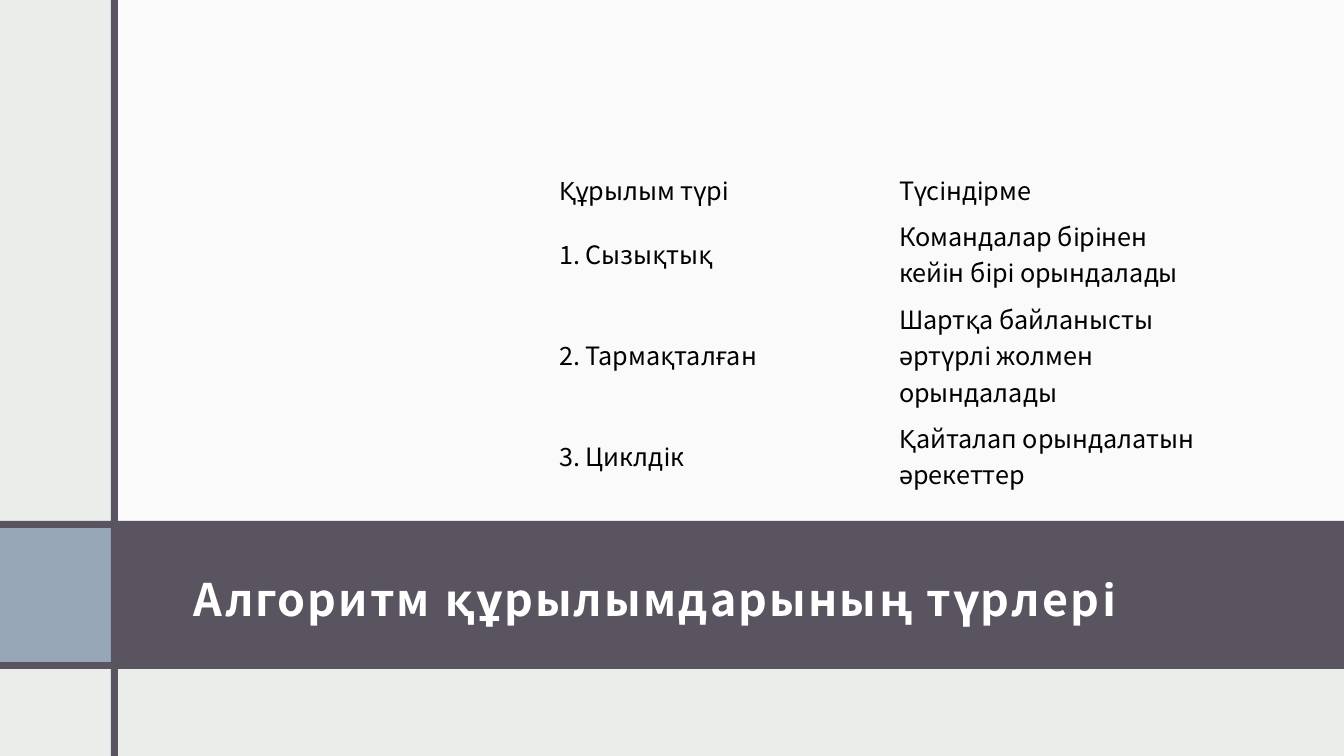
"""Build the slide on the kinds of algorithm structures."""
import dataclasses
import typing

import lxml.etree
import pptx
import pptx.dml.color
import pptx.enum.shapes
import pptx.enum.text
import pptx.oxml.ns
import pptx.util

PX = 914400 / 100.8
FONT = "Noto Sans CJK JP"
NO_STYLE = "{2D5ABB26-0587-4C30-8999-92F81FD0307C}"
COLORS = {
    "background": "EBEDEB",
    "panel": "FFFFFF",
    "band": "595460",
    "accent": "97A7B8",
    "title": "FFFFFF",
    "body": "000000",
}
TITLE_FORMAT = {"name": FONT, "size": pptx.util.Pt(32), "bold": True}
BODY_FORMAT = {"name": FONT, "size": pptx.util.Pt(18), "bold": False}


@dataclasses.dataclass(frozen=True)
class Block:
    x: int
    y: int
    w: int
    h: int
    color: str
    alpha: int = 100


@dataclasses.dataclass(frozen=True)
class Row:
    height: int
    kind: str
    meaning: str


BLOCKS = [
    Block(115, 0, 1229, 521, "panel", 75),
    Block(0, 521, 1344, 148, "band"),
    Block(0, 528, 111, 134, "accent"),
    Block(111, 0, 7, 756, "band"),
]
ROWS = [
    Row(46, "Құрылым түрі", "Түсіндірме"),
    Row(83, "1. Сызықтық", "Командалар бірінен кейін бірі орындалады"),
    Row(119, "2. Тармақталған", "Шартқа байланысты әртүрлі жолмен орындалады"),
    Row(83, "3. Циклдік", "Қайталап орындалатын әрекеттер"),
]


def px(n: int) -> int:
    """Turn pixels into EMU."""
    return round(n * PX)


def rgb(name: str) -> pptx.dml.color.RGBColor:
    """Look up a colour by its role."""
    return pptx.dml.color.RGBColor.from_string(COLORS[name])


def apply(target: typing.Any, values: dict[str, typing.Any]) -> None:
    """Set each named attribute on the target."""
    for key, value in values.items():
        setattr(target, key, value)


def add_block(s: typing.Any, block: Block) -> None:
    """Draw one plain rectangle."""
    sp = s.shapes.add_shape(
        pptx.enum.shapes.MSO_SHAPE.RECTANGLE,
        px(block.x), px(block.y), px(block.w), px(block.h),
    )
    sp.shadow.inherit = False
    sp.line.fill.background()
    sp.fill.solid()
    sp.fill.fore_color.rgb = rgb(block.color)
    if block.alpha < 100:
        clr = sp.fill._xPr.find(".//" + pptx.oxml.ns.qn("a:srgbClr"))
        alpha = lxml.etree.SubElement(clr, pptx.oxml.ns.qn("a:alpha"))
        alpha.set("val", str(block.alpha * 1000))


def write(tf: typing.Any, text: str, values: dict[str, typing.Any], color: str) -> typing.Any:
    """Write one formatted run into a text frame."""
    r = tf.paragraphs[0].add_run()
    r.text = text
    apply(r.font, values)
    r.font.color.rgb = rgb(color)
    return r


def add_title(s: typing.Any) -> None:
    """Place the title on the dark band."""
    tf = s.shapes.add_textbox(px(169), px(537), px(1104), px(114)).text_frame
    apply(tf, {
        "word_wrap": True,
        "vertical_anchor": pptx.enum.text.MSO_ANCHOR.MIDDLE,
        "margin_left": px(12),
        "margin_right": px(12),
        "margin_top": px(20),
        "margin_bottom": px(10),
    })
    r = write(tf, " Алгоритм құрылымдарының түрлері", TITLE_FORMAT, "title")
    r.font._element.set("spc", "150")


def add_structures(s: typing.Any) -> None:
    """Place the table of structures and their meanings."""
    height = sum(row.height for row in ROWS)
    frame = s.shapes.add_table(len(ROWS), 2, px(549), px(166), px(680), px(height))
    tbl = frame.table
    apply(tbl, {"first_row": False, "horz_banding": False})
    tbl._tbl.tblPr.find(pptx.oxml.ns.qn("a:tableStyleId")).text = NO_STYLE
    for i, row in enumerate(ROWS):
        tbl.rows[i].height = px(row.height)
        for j, text in enumerate((row.kind, row.meaning)):
            cell = tbl.cell(i, j)
            cell.fill.background()
            cell.vertical_anchor = pptx.enum.text.MSO_ANCHOR.MIDDLE
            write(cell.text_frame, text, BODY_FORMAT, "body")


def main() -> None:
    """Assemble and save the slide."""
    prs = pptx.Presentation()
    apply(prs, {"slide_width": px(1344), "slide_height": px(756)})
    s = prs.slides.add_slide(prs.slide_layouts[6])
    s.background.fill.solid()
    s.background.fill.fore_color.rgb = rgb("background")
    for block in BLOCKS:
        add_block(s, block)
    add_title(s)
    add_structures(s)
    prs.save("out.pptx")


if __name__ == "__main__":
    main()
